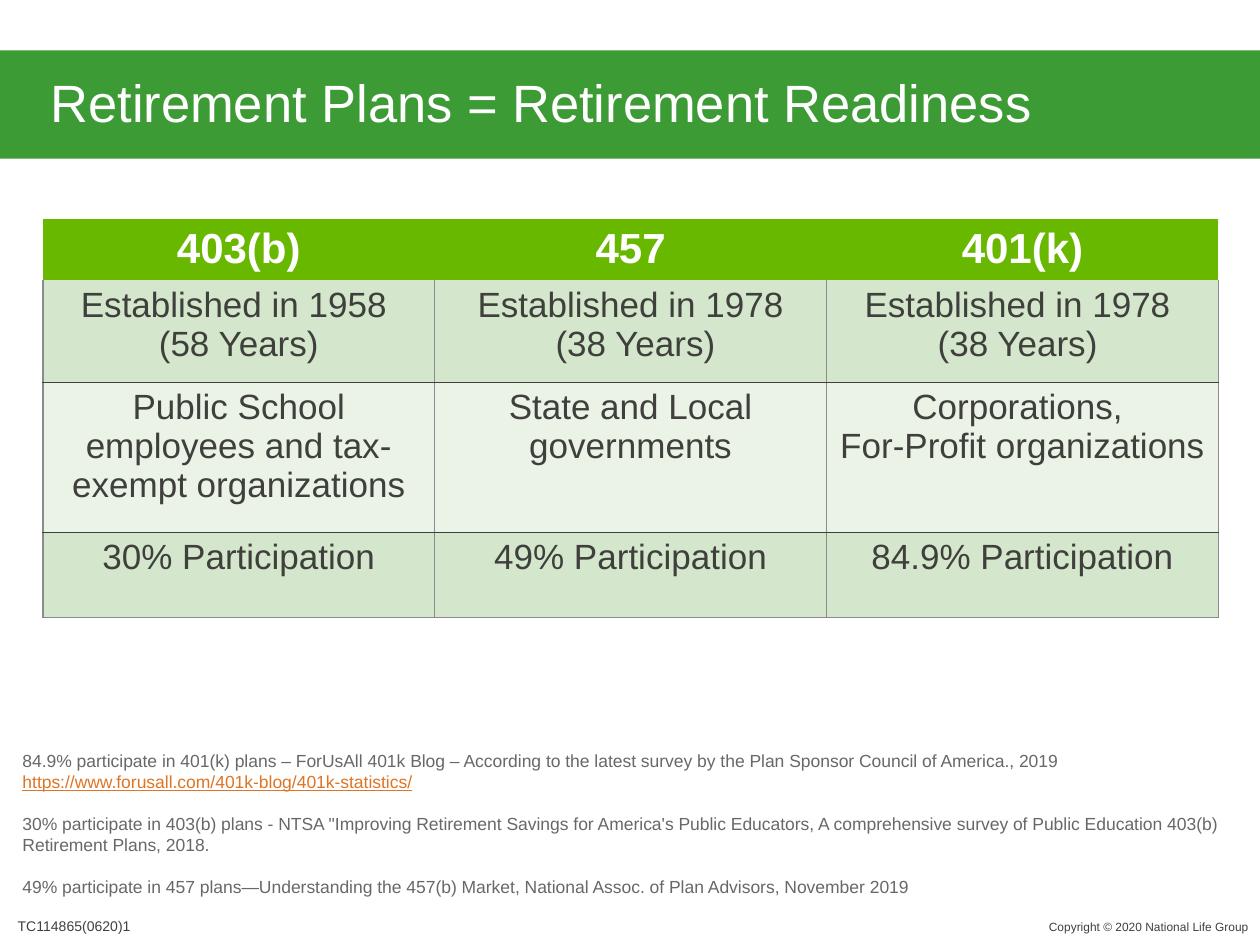
"""Build the retirement plan comparison slide."""
from lxml import etree
from pptx import Presentation
from pptx.dml.color import RGBColor
from pptx.enum import text
from pptx.oxml import ns
from pptx.util import Inches, Pt

WHITE = RGBColor(0xFF, 0xFF, 0xFF)
GREEN = RGBColor(0x3D, 0x9B, 0x35)
LIME = RGBColor(0x69, 0xB8, 0x00)
MINT = RGBColor(0xD4, 0xE6, 0xCC)
PALE = RGBColor(0xEB, 0xF3, 0xE7)
DARK = RGBColor(0x3F, 0x40, 0x3C)
GREY = RGBColor(0x66, 0x68, 0x6B)
EDGE = RGBColor(0x89, 0x8B, 0x8E)
ORANGE = RGBColor(0xDF, 0x74, 0x24)


def add_run(p, words, size, color, bold=False, underline=False):
    r = p.add_run()
    r.text = words
    r.font.name = "Arial"
    r.font.size = Pt(size)
    r.font.color.rgb = color
    r.font.bold = bold
    r.font.underline = underline


def set_border(cell, side, line):
    ln = etree.SubElement(cell._tc.get_or_add_tcPr(), ns.qn("a:ln" + side))
    if line is None:
        etree.SubElement(ln, ns.qn("a:noFill"))
        return
    color, width = line
    ln.set("w", str(Pt(width)))
    fill = etree.SubElement(ln, ns.qn("a:solidFill"))
    etree.SubElement(fill, ns.qn("a:srgbClr")).set("val", str(color))


prs = Presentation()
prs.slide_width, prs.slide_height = Inches(10), Inches(7.5)
s = prs.slides.add_slide(prs.slide_layouts[5])

title = s.shapes.title
title.left, title.top = Inches(0), Inches(0.4)
title.width, title.height = Inches(10), Inches(0.86)
title.fill.solid()
title.fill.fore_color.rgb = GREEN
tf = title.text_frame
tf.auto_size = text.MSO_AUTO_SIZE.NONE
tf.word_wrap = True
tf.vertical_anchor = text.MSO_ANCHOR.BOTTOM
tf.margin_left = tf.margin_right = Inches(0.4)
tf.margin_top = tf.margin_bottom = Inches(0.2)
p = tf.paragraphs[0]
p.alignment = text.PP_ALIGN.LEFT
p.line_spacing = 0.9
add_run(p, "Retirement Plans = Retirement Readiness", 30, WHITE)

rows = [
    ("403(b)", "457", "401(k)"),
    ("Established in 1958 \n(58 Years)", "Established in 1978\n (38 Years)",
     "Established in 1978 \n(38 Years) "),
    ("Public School employees and tax-exempt organizations",
     "State and Local governments", "Corporations, \nFor-Profit organizations"),
    ("30% Participation", "49% Participation", "84.9% Participation"),
]
heights = [0.48, 0.81, 1.19, 0.68]
fills = [LIME, MINT, PALE, MINT]
outer, inner = (EDGE, 1), (DARK, 0.25)
rules = [None, None, inner, inner, outer]

table = s.shapes.add_table(4, 3, Inches(0.34), Inches(1.74), Inches(9.33), Inches(3.17)).table
for col in table.columns:
    col.width = Inches(3.11)
for i, words in enumerate(rows):
    header = i == 0
    side = None if header else outer
    table.rows[i].height = Inches(heights[i])
    for j, content in enumerate(words):
        cell = table.cell(i, j)
        for edge, line in zip("LRTB", (side, side, rules[i], rules[i + 1])):
            set_border(cell, edge, line)
        cell.fill.solid()
        cell.fill.fore_color.rgb = fills[i]
        p = cell.text_frame.paragraphs[0]
        p.alignment = text.PP_ALIGN.CENTER
        for k, part in enumerate(content.split("\n")):
            if k:
                p.add_line_break()
            add_run(p, part, 24 if header else 20, WHITE if header else DARK, bold=header)

notes = [
    [("84.9% participate in 401(k) plans – ForUsAll 401k Blog – According to the latest "
      "survey by the Plan Sponsor Council of America., 2019 ", GREY, False),
     ("https://www.forusall.com/401k-blog/401k-statistics/", ORANGE, True)],
    [("30% participate in 403(b) plans - NTSA \"Improving Retirement Savings for America's "
      "Public Educators, A comprehensive survey of Public Education 403(b) Retirement "
      "Plans, 2018.", GREY, False)],
    [("49% participate in 457 plans—Understanding the 457(b) Market, National Assoc. of "
      "Plan Advisors, November 2019", GREY, False)],
]
tf = s.shapes.add_textbox(Inches(0.08), Inches(5.9), Inches(9.72), Inches(1.28)).text_frame
tf.word_wrap = True
for i, note in enumerate(notes):
    p = tf.add_paragraph() if i else tf.paragraphs[0]
    if i:
        p.space_before = Pt(12)
    for words, color, underline in note:
        add_run(p, words, 10, color, underline=underline)

footers = [
    ("TC114865(0620)1", 0.14, 7.28, 1.04, 0.13, 8, text.PP_ALIGN.LEFT, text.MSO_ANCHOR.TOP),
    ("Copyright © 2020 National Life Group", 7.66, 7.3, 2.25, 0.11, 6.8,
     text.PP_ALIGN.RIGHT, text.MSO_ANCHOR.MIDDLE),
]
for words, x, y, w, h, size, align, anchor in footers:
    tf = s.shapes.add_textbox(Inches(x), Inches(y), Inches(w), Inches(h)).text_frame
    tf.word_wrap = True
    tf.vertical_anchor = anchor
    tf.margin_left = tf.margin_right = tf.margin_top = tf.margin_bottom = Inches(0)
    p = tf.paragraphs[0]
    p.alignment = align
    add_run(p, words, size, DARK)

prs.save("out.pptx")
